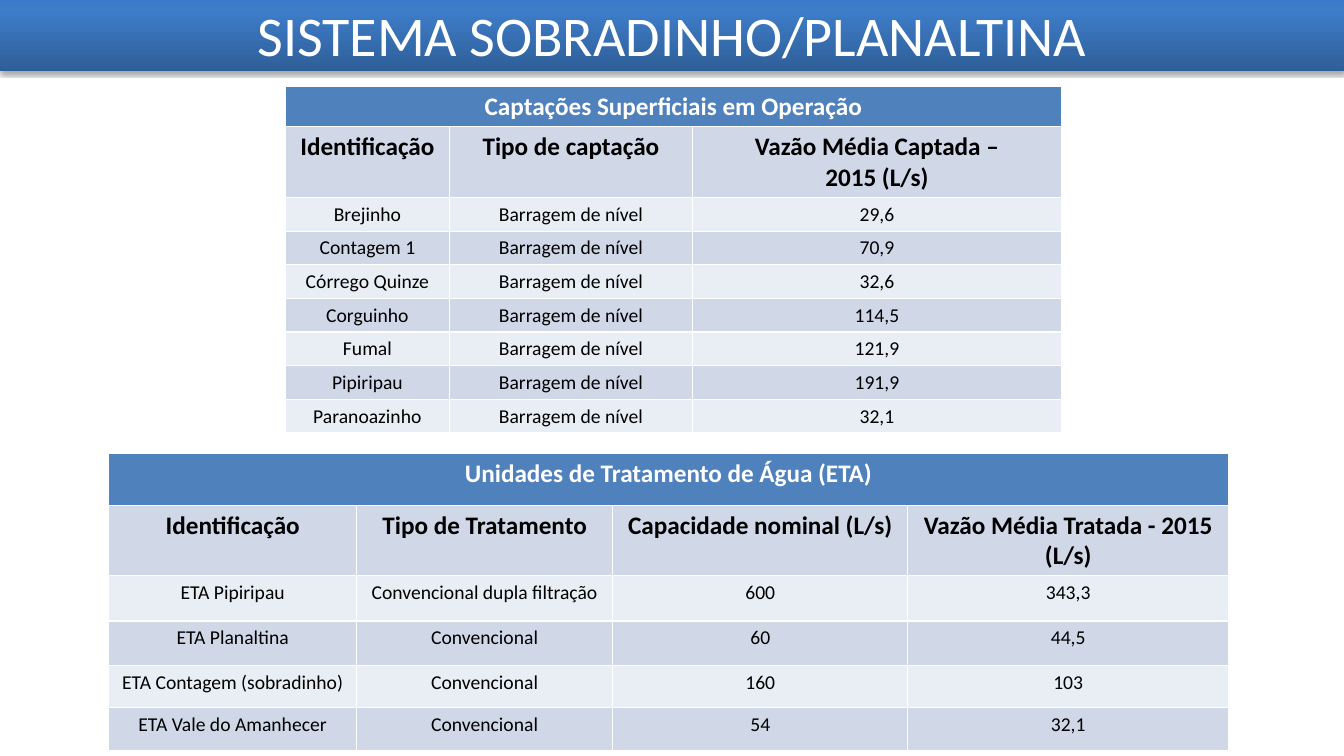
"""Build the slide on the Sobradinho/Planaltina water system."""
from dataclasses import dataclass

from pptx import Presentation
from pptx.dml.color import RGBColor
from pptx.enum.text import MSO_ANCHOR, MSO_AUTO_SIZE, PP_ALIGN
from pptx.oxml import parse_xml
from pptx.oxml.ns import nsdecls
from pptx.slide import Slide
from pptx.text.text import TextFrame
from pptx.util import Cm, Pt

HUES = {
    "head": "4F81BD", "dark": "D0D8E8", "pale": "E9EDF4",
    "white": "FFFFFF", "black": "000000",
    "low": "2F5F99", "mid": "3D7CC7", "top": "3A7CCB",
}
WIDTH = 33.87


@dataclass
class Grid:
    left: float
    top: float
    cols: list[float]
    highs: list[float]
    name: str
    rows: list[tuple[str, ...]]


ETAS = Grid(
    2.74, 11.43, [6.25, 6.45, 7.44, 8.08], [1.3, 0.97, 1.14, 1.12, 1.07, 1.07],
    "Unidades de Tratamento de Água (ETA)",
    [
        ("Identificação", "Tipo de Tratamento", "Capacidade nominal (L/s)",
         "Vazão Média Tratada - 2015 (L/s)"),
        ("ETA Pipiripau", "Convencional dupla filtração", "600", "343,3"),
        ("ETA Planaltina", "Convencional", "60", "44,5"),
        ("ETA Contagem (sobradinho)", "Convencional", "160", "103"),
        ("ETA Vale do Amanhecer", "Convencional", "54", "32,1"),
    ],
)
FLOWS = {
    "Brejinho": "29,6", "Contagem 1": "70,9", "Córrego Quinze": "32,6",
    "Corguinho": "114,5", "Fumal": "121,9", "Pipiripau": "191,9",
    "Paranoazinho": "32,1",
}
DAMS = Grid(
    7.19, 2.18, [4.14, 6.12, 9.3], [0.89] * 2 + [0.74] * len(FLOWS),
    "Captações Superficiais em Operação",
    [("Identificação", "Tipo de captação", "Vazão Média Captada –\n2015 (L/s)")]
    + [(spot, "Barragem de nível", flow) for spot, flow in FLOWS.items()],
)


def style(frame: TextFrame, size: int, hue: str, bold: bool) -> None:
    """Centre the text and set its font."""
    for para in frame.paragraphs:
        para.alignment = PP_ALIGN.CENTER
        for run in para.runs:
            font = run.font
            font.name, font.size, font.bold = "Calibri", Pt(size), bold
            font.color.rgb = RGBColor.from_string(HUES[hue])


def add_title(slide: Slide, text: str) -> None:
    """Format the title as a shaded banner."""
    title = slide.shapes.title
    title.left, title.top = Cm(0), Cm(0)
    title.width, title.height = Cm(WIDTH), Cm(1.7)
    frame = title.text_frame
    frame.text = text
    frame.margin_left = frame.margin_right = Cm(0)
    frame.margin_top = frame.margin_bottom = Cm(0)
    frame.vertical_anchor = MSO_ANCHOR.MIDDLE
    frame.word_wrap = True
    frame.auto_size = MSO_AUTO_SIZE.SHAPE_TO_FIT_TEXT
    style(frame, 40, "white", False)
    stops = "".join(
        f'<a:gs pos="{pos * 1000}"><a:srgbClr val="{HUES[hue]}"/></a:gs>'
        for pos, hue in ((0, "low"), (80, "mid"), (100, "top"))
    )
    space = nsdecls("a")
    for code in (
        f'<a:prstGeom {space} prst="rect"><a:avLst/></a:prstGeom>',
        f'<a:gradFill {space} rotWithShape="1"><a:gsLst>{stops}</a:gsLst>'
        '<a:lin ang="16200000" scaled="0"/></a:gradFill>',
        f'<a:effectLst {space}><a:outerShdw blurRad="{Pt(3.1)}" '
        f'dist="{Pt(1.8)}" dir="5400000" rotWithShape="0">'
        f'<a:srgbClr val="{HUES["black"]}"><a:alpha val="35000"/></a:srgbClr>'
        '</a:outerShdw></a:effectLst>',
    ):
        title.element.spPr.append(parse_xml(code))


def add_grid(slide: Slide, grid: Grid) -> None:
    """Draw a banded table under a merged heading."""
    table = slide.shapes.add_table(
        len(grid.highs), len(grid.cols), Cm(grid.left), Cm(grid.top),
        Cm(sum(grid.cols)), Cm(sum(grid.highs)),
    ).table
    for col, width in zip(table.columns, grid.cols):
        col.width = Cm(width)
    for row, high in zip(table.rows, grid.highs):
        row.height = Cm(high)
    table.cell(0, 0).merge(table.cell(0, len(grid.cols) - 1))
    head = (grid.name,) + ("",) * (len(grid.cols) - 1)
    for i, texts in enumerate([head, *grid.rows]):
        band = "head" if i == 0 else "dark" if i % 2 else "pale"
        for j, text in enumerate(texts):
            cell = table.cell(i, j)
            cell.fill.solid()
            cell.fill.fore_color.rgb = RGBColor.from_string(HUES[band])
            if text:
                cell.text_frame.text = text
                style(cell.text_frame, 18 if i < 2 else 14,
                      "black" if i else "white", i < 2)


def main() -> None:
    """Build and save the slide."""
    deck = Presentation()
    deck.slide_width, deck.slide_height = Cm(WIDTH), Cm(19.05)
    slide = deck.slides.add_slide(deck.slide_layouts[5])
    add_title(slide, "SISTEMA SOBRADINHO/PLANALTINA")
    for grid in (ETAS, DAMS):
        add_grid(slide, grid)
    deck.save("out.pptx")


if __name__ == "__main__":
    main()
